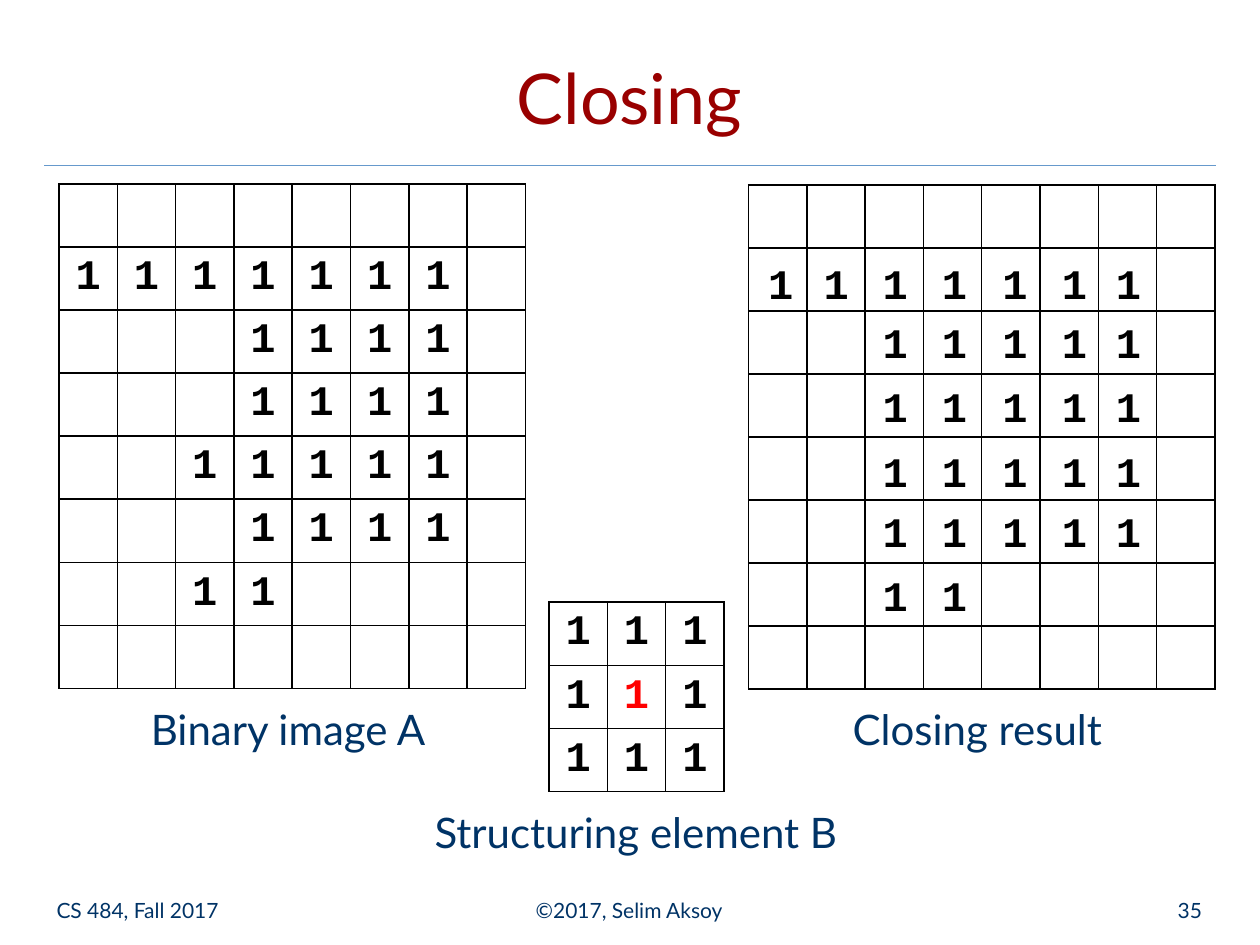
"""Build a slide that shows morphological closing of a binary image."""
from lxml import etree
from pptx import Presentation
from pptx.dml.color import RGBColor
from pptx.enum.shapes import MSO_CONNECTOR
from pptx.enum.text import MSO_ANCHOR, MSO_AUTO_SIZE, PP_ALIGN
from pptx.oxml.ns import qn
from pptx.util import Cm, Pt

LEFT, CENTER, RIGHT = PP_ALIGN.LEFT, PP_ALIGN.CENTER, PP_ALIGN.RIGHT
MIDDLE, BOTTOM, TOP = MSO_ANCHOR.MIDDLE, MSO_ANCHOR.BOTTOM, MSO_ANCHOR.TOP
FIT_SHAPE, NO_FIT = MSO_AUTO_SIZE.SHAPE_TO_FIT_TEXT, MSO_AUTO_SIZE.NONE
STRAIGHT = MSO_CONNECTOR.STRAIGHT

THEME = {
    "title": "990000", "text": "003366", "rule": "6699CC",
    "ink": "000000", "origin": "FF0000",
    "title_size": 40, "label_size": 24, "footer_size": 12,
    "font": "Lato", "digit_font": "Courier New",
}
DIGIT = {"font": THEME["digit_font"], "size": THEME["label_size"],
         "bold": True, "align": CENTER}
CELL_WIDTH, CELL_HEIGHT = Cm(9.4) // 8, Cm(1.27)

BINARY_IMAGE = ["        ", "1111111 ", "   1111 ", "   1111 ",
                "  11111 ", "   1111 ", "  11    ", "        "]
CLOSING_RESULT = ["1111111", "  11111", "  11111", "  11111", "  11111", "  11"]
STRUCTURING_ELEMENT = ["111", "1*1", "111"]


def write(frame, text, *, color, size, font=THEME["font"], bold=False,
          align=LEFT, space_before=0):
    paragraph = frame.paragraphs[0]
    paragraph.alignment = align
    paragraph.space_before = Pt(space_before)
    run = paragraph.add_run()
    run.text = text
    run.font.name = font
    run.font.size = Pt(size)
    run.font.bold = bold
    run.font.color.rgb = RGBColor.from_string(color)


def add_grid(slide, left, top, rows):
    columns = len(rows[0])
    table = slide.shapes.add_table(
        len(rows), columns, Cm(left), Cm(top),
        CELL_WIDTH * columns, CELL_HEIGHT * len(rows)).table
    table.first_row = table.horz_banding = False
    for row_index, row in enumerate(rows):
        for column_index, mark in enumerate(row):
            cell = table.cell(row_index, column_index)
            cell.fill.background()
            cell.vertical_anchor = MIDDLE
            properties = cell._tc.get_or_add_tcPr()
            for position, side in enumerate(("a:lnL", "a:lnR", "a:lnT", "a:lnB")):
                border = etree.Element(qn(side), w=str(Pt(1)))
                fill = etree.SubElement(border, qn("a:solidFill"))
                etree.SubElement(fill, qn("a:srgbClr"), val=THEME["ink"])
                properties.insert(position, border)
            if mark != " ":
                color = THEME["origin" if mark == "*" else "ink"]
                write(cell.text_frame, "1", color=color, **DIGIT)


presentation = Presentation()
presentation.slide_width, presentation.slide_height = Cm(25.4), Cm(19.05)
slide = presentation.slides.add_slide(presentation.slide_layouts[5])

title = slide.shapes.title
title.left, title.top, title.width, title.height = Cm(0.89), Cm(0.53), Cm(23.6), Cm(2.39)
title.text_frame.vertical_anchor = BOTTOM
write(title.text_frame, "Closing", color=THEME["title"],
      size=THEME["title_size"], align=CENTER)

rule = slide.shapes.add_connector(STRAIGHT, Cm(0.89), Cm(3.33), Cm(24.51), Cm(3.33))
rule.line.color.rgb = RGBColor.from_string(THEME["rule"])
rule.line.width = Pt(0.75)
etree.SubElement(rule._element.spPr, qn("a:effectLst"))

footers = [("CS 484, Fall 2017", 0.89, 5.28, LEFT),
           ("©2017, Selim Aksoy", 8.66, 8.05, CENTER),
           ("35", 19.2, 5.28, RIGHT)]
for text, left, width, align in footers:
    frame = slide.shapes.add_textbox(Cm(left), Cm(17.83), Cm(width), Cm(0.89)).text_frame
    frame.word_wrap = True
    frame.vertical_anchor = BOTTOM
    write(frame, text, color=THEME["text"], size=THEME["footer_size"], align=align)

labels = [("Binary image A", 2.79, 14.05, 6.15),
          ("Structuring element B", 8.51, 16.13, 8.64),
          ("Closing result", 16.94, 14.05, 5.54)]
for text, left, top, width in labels:
    frame = slide.shapes.add_textbox(Cm(left), Cm(top), Cm(width), Cm(1.27)).text_frame
    frame.word_wrap = False
    frame.auto_size = FIT_SHAPE
    write(frame, text, color=THEME["text"], size=THEME["label_size"])

add_grid(slide, 15.09, 3.73, [" " * 8] * 8)
add_grid(slide, 1.19, 3.71, BINARY_IMAGE)
add_grid(slide, 11.07, 12.14, STRUCTURING_ELEMENT)

digit_lefts = [15.09, 16.21, 17.4, 18.59, 19.81, 21.01, 22.1]
digit_tops = [5.13, 6.32, 7.62, 8.92, 10.13, 11.43]
for top, row in zip(digit_tops, CLOSING_RESULT):
    for left, mark in zip(digit_lefts, row):
        if mark == "1":
            frame = slide.shapes.add_textbox(Cm(left), Cm(top), Cm(1.3), Cm(1.12)).text_frame
            frame.word_wrap = True
            frame.auto_size = FIT_SHAPE
            frame.vertical_anchor = MIDDLE
            frame.margin_left = frame.margin_right = Cm(0.05)
            frame.margin_top = frame.margin_bottom = Cm(0.05)
            write(frame, mark, color=THEME["ink"], space_before=10, **DIGIT)

presentation.save("out.pptx")
